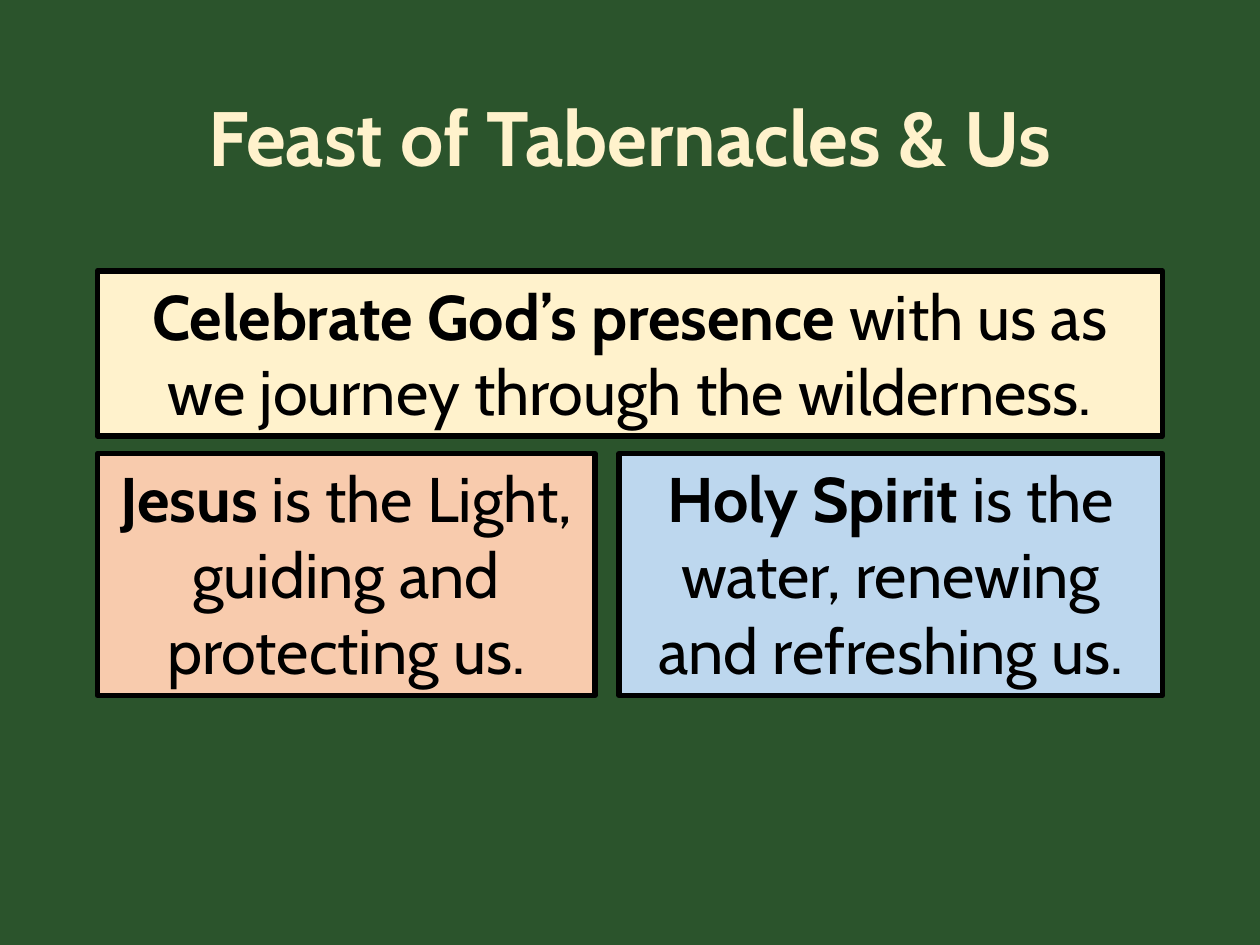
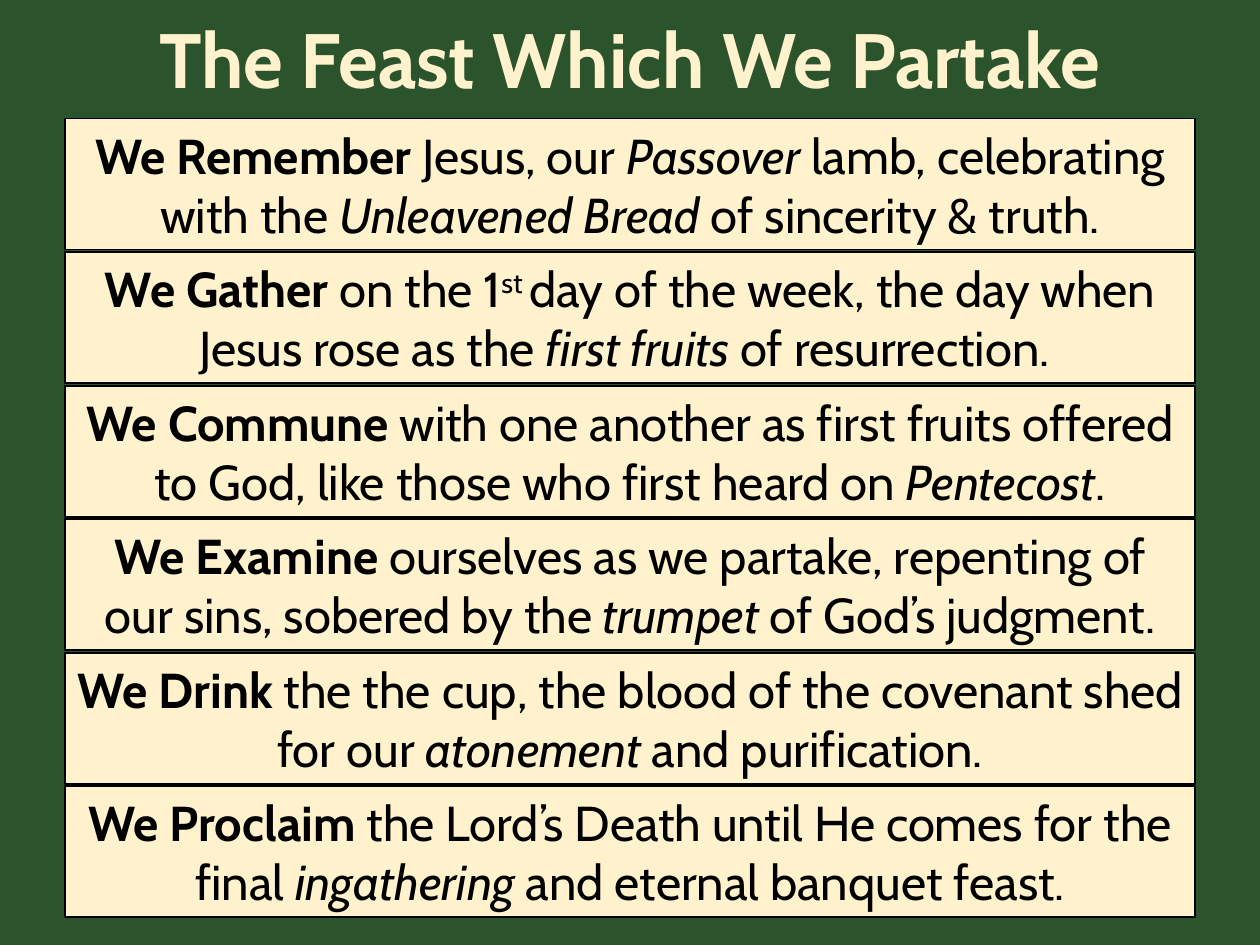
from dataclasses import dataclass

from pptx import Presentation
from pptx.dml.color import RGBColor
from pptx.enum.shapes import MSO_SHAPE as Shape
from pptx.enum.text import MSO_ANCHOR as Anchor, MSO_AUTO_SIZE as AutoSize, PP_ALIGN as Align
from pptx.util import Pt


@dataclass(frozen=True)
class Theme:
    font: str = "Cabin"
    background: str = "2B542C"
    cream: str = "FFF2CC"
    peach: str = "F8CBAD"
    sky: str = "BDD7EE"
    ink: str = "000000"
    title_size: int = 44
    card_size: int = 36
    row_size: int = 28


THEME = Theme()
SLIDE_WIDTH, SLIDE_HEIGHT = 720, 540

BOLD = {"bold": True}
ITALIC = {"italic": True}
RAISED = {"raised": True}

ROWS = [
    [("We Remember ", BOLD), ("Jesus, our ", {}), ("Passover ", ITALIC),
     ("lamb, celebrating with the ", {}), ("Unleavened Bread ", ITALIC),
     ("of sincerity & truth.", {})],
    [("We Gather ", BOLD), ("on the 1", {}), ("st ", RAISED),
     ("day of the week, the day when Jesus rose as the ", {}),
     ("first fruits ", ITALIC), ("of resurrection. ", {})],
    [("We Commune ", BOLD),
     ("with one another as first fruits offered to God, like those who first heard on ", {}),
     ("Pentecost", ITALIC), (".", {})],
    [("We Examine ", BOLD),
     ("ourselves as we partake, repenting of our sins, sobered by the ", {}),
     ("trumpet", ITALIC), (" of God’s judgment.", {})],
    [("We Drink ", BOLD), ("the the cup, the blood of the covenant shed for our ", {}),
     ("atonement ", ITALIC), ("and purification.", {})],
    [("We Proclaim ", BOLD), ("the Lord’s Death until He comes for the final ", {}),
     ("ingathering", ITALIC), (" and eternal banquet feast.", {})],
]


def add_run(paragraph, text, *, size, color=THEME.ink, bold=False, italic=False, raised=False):
    run = paragraph.add_run()
    run.text = text
    font = run.font
    font.name = THEME.font
    font.size = Pt(size)
    font.bold = bold
    font.italic = italic
    font.color.rgb = RGBColor.from_string(color)
    if raised:
        run._r.get_or_add_rPr().set("baseline", "30000")


def add_slide(presentation):
    slide = presentation.slides.add_slide(presentation.slide_layouts[6])
    fill = slide.background.fill
    fill.solid()
    fill.fore_color.rgb = RGBColor.from_string(THEME.background)
    return slide


def add_title(slide, text, *, top, height):
    width = 620.6
    box = slide.shapes.add_textbox(Pt((SLIDE_WIDTH - width) / 2), Pt(top), Pt(width), Pt(height))
    frame = box.text_frame
    frame.word_wrap = True
    frame.vertical_anchor = Anchor.MIDDLE
    paragraph = frame.paragraphs[0]
    paragraph.alignment = Align.CENTER
    paragraph.line_spacing = 0.9
    add_run(paragraph, text, size=THEME.title_size, color=THEME.cream, bold=True)


def add_card(slide, runs, left, top, width, height, *, size, line_width,
             fill=THEME.cream, anchor=Anchor.TOP):
    card = slide.shapes.add_shape(Shape.RECTANGLE, Pt(left), Pt(top), Pt(width), Pt(height))
    card.shadow.inherit = False
    card.fill.solid()
    card.fill.fore_color.rgb = RGBColor.from_string(fill)
    card.line.color.rgb = RGBColor.from_string(THEME.ink)
    card.line.width = Pt(line_width)
    frame = card.text_frame
    frame.word_wrap = True
    frame.auto_size = AutoSize.SHAPE_TO_FIT_TEXT
    frame.vertical_anchor = anchor
    paragraph = frame.paragraphs[0]
    paragraph.alignment = Align.CENTER
    for text, style in runs:
        add_run(paragraph, text, size=size, **style)


def build_tabernacles(presentation):
    slide = add_slide(presentation)
    add_title(slide, "Feast of Tabernacles & Us", top=28.8, height=104.4)
    left, width, lower_top, lower_height = 55.6, 608.6, 259.2, 138.2
    jesus_width, spirit_width = 284.4, 310.4
    spirit_left = left + width - spirit_width
    cards = [
        ("Celebrate God’s presence ", "with us as we journey through the wilderness.",
         THEME.cream, (left, 154.8, width, 94.3)),
        ("Jesus ", "is the Light, guiding and protecting us.",
         THEME.peach, (left, lower_top, jesus_width, lower_height)),
        ("Holy Spirit ", "is the water, renewing and refreshing us.",
         THEME.sky, (spirit_left, lower_top, spirit_width, lower_height)),
    ]
    for lead, rest, fill, box in cards:
        add_card(slide, [(lead, BOLD), (rest, {})], *box,
                 size=THEME.card_size, line_width=3, fill=fill)


def build_partake(presentation):
    slide = add_slide(presentation)
    add_title(slide, "The Feast Which We Partake", top=7.9, height=56.9)
    width, height, first_top, pitch = 645.8, 74.9, 67.8, 76.3
    left = (SLIDE_WIDTH - width) / 2
    for index, runs in enumerate(ROWS):
        add_card(slide, runs, left, first_top + index * pitch, width, height,
                 size=THEME.row_size, line_width=1, anchor=Anchor.MIDDLE)


def main():
    presentation = Presentation()
    presentation.slide_width = Pt(SLIDE_WIDTH)
    presentation.slide_height = Pt(SLIDE_HEIGHT)
    build_tabernacles(presentation)
    build_partake(presentation)
    presentation.save("out.pptx")


if __name__ == "__main__":
    main()
